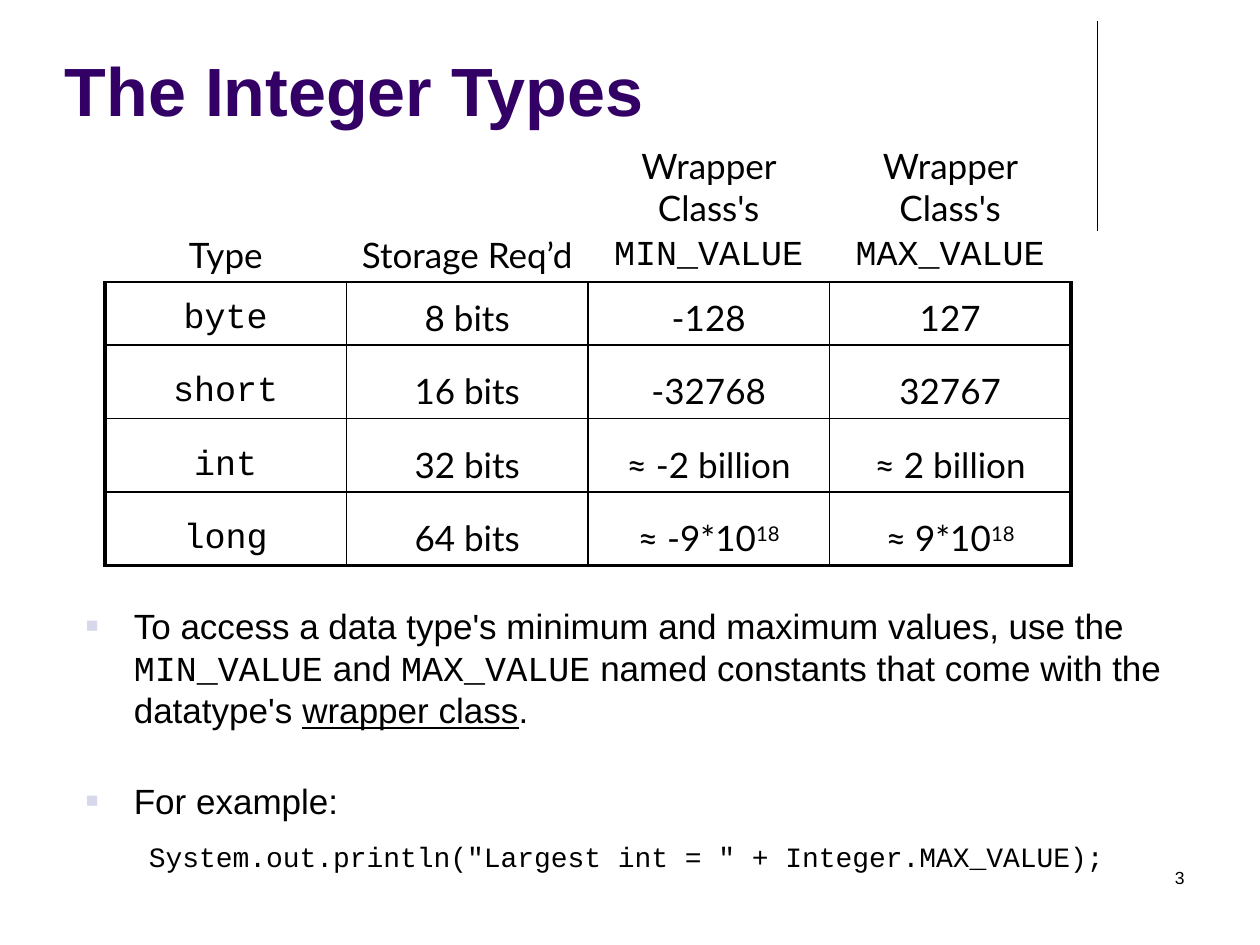
import pptx
import pptx.dml.color
import pptx.enum.shapes
import pptx.enum.text
import pptx.oxml
import pptx.oxml.ns
import pptx.util

COLORS = {"text": "000000", "title": "330066", "bullet": "D8D8EC"}
SANS, TABLE_FONT, CODE = "Arial", "Lato", "Courier New"
COLS, ROWS = 120, 90
ALIGN = pptx.enum.text.PP_ALIGN
ANCHOR = pptx.enum.text.MSO_ANCHOR

prs = pptx.Presentation()
prs.slide_width = pptx.util.Inches(10)
prs.slide_height = pptx.util.Inches(7.5)


def grid(*values):
    """Turn alternating column and row counts into lengths."""
    units = (prs.slide_width / COLS, prs.slide_height / ROWS)
    return [round(v * units[i % 2]) for i, v in enumerate(values)]


def xml(text):
    return pptx.oxml.parse_xml(text.replace(" ", f" {pptx.oxml.ns.nsdecls('a')} ", 1))


def add_run(p, text, font=SANS, size=20, color="text", bold=False):
    r = p.add_run()
    r.text = text
    r.font.name, r.font.size, r.font.bold = font, pptx.util.Pt(size), bold
    r.font.color.rgb = pptx.dml.color.RGBColor.from_string(COLORS[color])
    return r


def add_text_frame(s, box):
    tf = s.shapes.add_textbox(*grid(*box)).text_frame
    tf.word_wrap = True
    return tf


def add_title(s, box, text):
    tf = add_text_frame(s, box)
    tf.vertical_anchor = ANCHOR.BOTTOM
    add_run(tf.paragraphs[0], text, size=39, color="title", bold=True)


def add_slide_number(s, box, number):
    p = add_text_frame(s, box).paragraphs[0]
    p.alignment = ALIGN.RIGHT
    add_run(p, str(number), size=10)


def add_side_rule(s, ends):
    line = s.shapes.add_connector(pptx.enum.shapes.MSO_CONNECTOR.STRAIGHT, *grid(*ends))
    line.line.width = pptx.util.Pt(0.75)
    line.line.color.rgb = pptx.dml.color.RGBColor.from_string(COLORS["text"])
    line._element.spPr.append(xml("<a:effectLst />"))


def set_borders(cell, **widths):
    """Draw the four sides; a width of 0 points leaves a side open."""
    tcPr = cell._tc.get_or_add_tcPr()
    for side in "LRTB":
        width = widths[side]
        fill = (f'<a:solidFill><a:srgbClr val="{COLORS["text"]}"/></a:solidFill>'
                if width else "<a:noFill/>")
        tcPr.append(xml(f'<a:ln{side} w="{pptx.util.Pt(width)}">{fill}</a:ln{side}>'))


def fill_cell(cell, lines):
    """Each line is a list of (text, font, superscript) parts."""
    cell.vertical_anchor = ANCHOR.BOTTOM
    tf = cell.text_frame
    for i, parts in enumerate(lines):
        p = tf.add_paragraph() if i else tf.paragraphs[0]
        p.alignment = ALIGN.CENTER
        p.space_before = pptx.util.Pt(4 if i else 0)
        for text, font, superscript in parts:
            r = add_run(p, text, font)
            if superscript:
                r._r.get_or_add_rPr().set("baseline", "30000")


def plain(text):
    return [[(text, TABLE_FONT, False)]]


def code(text):
    return [[(text, CODE, False)]]


def power(base, exponent):
    return [[(base, TABLE_FONT, False), (exponent, TABLE_FONT, True)]]


def add_type_table(s, box, row_heights, rows):
    table = s.shapes.add_table(len(rows), len(rows[0]), *grid(*box)).table
    table.first_row = table.horz_banding = False
    for column in table.columns:
        column.width = grid(box[2] / len(rows[0]))[0]
    for row, height in zip(table.rows, row_heights):
        row.height = grid(0, height)[1]
    last_row, last_col = len(rows) - 1, len(rows[0]) - 1
    for i, row in enumerate(rows):
        for j, lines in enumerate(row):
            cell = table.cell(i, j)
            fill_cell(cell, lines)
            if i == 0:
                set_borders(cell, L=0, R=0, T=0, B=1)
            else:
                set_borders(cell, T=1, L=2.25 if j == 0 else 1,
                            R=2.25 if j == last_col else 1,
                            B=2.25 if i == last_row else 1)
            cell.fill.background()


def set_indent(p, left, first):
    pPr = p._p.get_or_add_pPr()
    pPr.set("marL", str(pptx.util.Inches(left)))
    pPr.set("indent", str(pptx.util.Inches(first)))
    return pPr


def add_bullet(p):
    pPr = set_indent(p, 0.38, -0.38)
    for text in (f'<a:buClr ><a:srgbClr val="{COLORS["bullet"]}"/></a:buClr>',
                 '<a:buSzPct val="60000"/>',
                 f'<a:buFont typeface="{SANS}"/>',
                 '<a:buChar char="■"/>'):
        pPr.append(xml(text))


def add_notes_on_constants(s, box):
    tf = add_text_frame(s, box)
    p = tf.paragraphs[0]
    add_bullet(p)
    for text, font in (
            ("To access a data type's minimum and maximum values, use the ", SANS),
            ("MIN_VALUE", CODE), (" and ", SANS), ("MAX_VALUE", CODE),
            (" named constants that come with the datatype's ", SANS)):
        add_run(p, text, font)
    add_run(p, "wrapper class").font.underline = True
    add_run(p, ".")

    p = tf.add_paragraph()
    add_bullet(p)
    p.space_before = pptx.util.Pt(28)
    add_run(p, "For example:")

    p = tf.add_paragraph()
    p.level = 1
    set_indent(p, 0.81, -0.31)
    p.space_before = pptx.util.Pt(10)
    add_run(p, 'System.out.println("Largest int = " + Integer.MAX_VALUE);', CODE, 16)


def main():
    s = prs.slides.add_slide(prs.slide_layouts[6])
    add_side_rule(s, (104.5, 2, 104.5, 22))
    add_slide_number(s, (86, 82, 28, 6), 3)
    add_title(s, (5, 5, 93, 8), "The Integer Types")
    add_notes_on_constants(s, (7, 57, 105, 21))
    wrapper = plain("Wrapper Class's")
    add_type_table(s, (10, 13, 92, 40.7), (13.7, 6, 7, 7, 7), [
        [plain("Type"), plain("Storage Req’d"),
         wrapper + code("MIN_VALUE"), wrapper + code("MAX_VALUE")],
        [code("byte"), plain("8 bits"), plain("-128"), plain("127")],
        [code("short"), plain("16 bits"), plain("-32768"), plain("32767")],
        [code("int"), plain("32 bits"), plain("≈ -2 billion"), plain("≈ 2 billion")],
        [code("long"), plain("64 bits"), power("≈ -9*10", "18"), power("≈ 9*10", "18")],
    ])
    prs.save("out.pptx")


if __name__ == "__main__":
    main()
